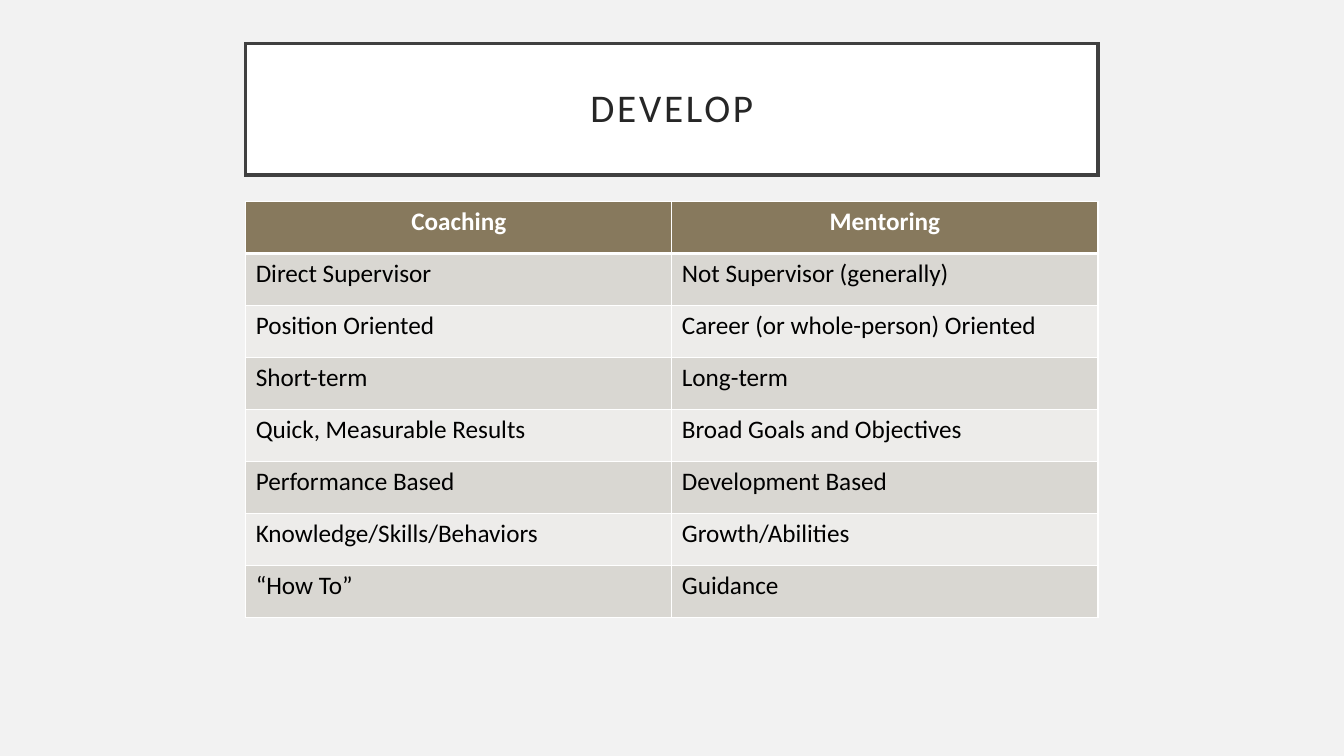
from dataclasses import dataclass

from lxml import etree
from pptx import Presentation
from pptx.dml.color import RGBColor
from pptx.enum import shapes, text
from pptx.oxml import ns
from pptx.util import Pt

TITLE = "DEVELOP"
HEADERS = ("Coaching", "Mentoring")
COMPARISONS = [
    ("Direct Supervisor", "Not Supervisor (generally)"),
    ("Position Oriented", "Career (or whole-person) Oriented"),
    ("Short-term", "Long-term"),
    ("Quick, Measurable Results", "Broad Goals and Objectives"),
    ("Performance Based", "Development Based"),
    ("Knowledge/Skills/Behaviors", "Growth/Abilities"),
    ("“How To”", "Guidance"),
]


@dataclass(frozen=True)
class Theme:
    font: str = "Calibri"
    background: str = "F2F2F2"
    white: str = "FFFFFF"
    frame: str = "404040"
    title: str = "262626"
    body: str = "000000"
    header: str = "87795D"
    bands: tuple = ("D9D7D2", "EDECEA")
    title_size: float = 28
    table_size: float = 18


THEME = Theme()
SLIDE_WIDTH, SLIDE_HEIGHT = 960, 540
LEFT, CONTENT_WIDTH = 175.5, 608.8
TITLE_TOP, TITLE_HEIGHT = 31.2, 93.8
TABLE_TOP, ROW_HEIGHT = 144, 37.15
TITLE_INSET = 14.4
GRID_LINE, HEADER_LINE = 1, 3


def color(value):
    return RGBColor.from_string(value)


def paint(target, value):
    target.fill.solid()
    target.fill.fore_color.rgb = color(value)


def write(frame, words, *, size, ink, bold=False, align=text.PP_ALIGN.LEFT,
          line_spacing=None, tracking=None):
    paragraph = frame.paragraphs[0]
    paragraph.alignment = align
    paragraph.line_spacing = line_spacing
    run = paragraph.add_run()
    run.text = words
    run.font.name = THEME.font
    run.font.size = Pt(size)
    run.font.bold = bold
    run.font.color.rgb = color(ink)
    if tracking:
        run.font._element.set("spc", str(tracking * 100))


def set_borders(cell, **widths):
    properties = cell._tc.get_or_add_tcPr()
    for side in "LRTB":
        border = etree.SubElement(properties, ns.qn(f"a:ln{side}"),
                                  w=str(Pt(widths.get(side, GRID_LINE))))
        fill = etree.SubElement(border, ns.qn("a:solidFill"))
        etree.SubElement(fill, ns.qn("a:srgbClr"), val=THEME.white)


def add_title(slide):
    shape = slide.shapes.add_shape(
        shapes.MSO_SHAPE.RECTANGLE,
        Pt(LEFT), Pt(TITLE_TOP), Pt(CONTENT_WIDTH), Pt(TITLE_HEIGHT))
    shape.shadow.inherit = False
    paint(shape, THEME.white)
    shape.line.color.rgb = color(THEME.frame)
    shape.line.width = Pt(2.5)
    outline = shape._element.spPr.find(ns.qn("a:ln"))
    etree.SubElement(outline, ns.qn("a:miter"), lim="800000")
    frame = shape.text_frame
    frame.word_wrap = True
    frame.vertical_anchor = text.MSO_ANCHOR.MIDDLE
    frame.margin_left = frame.margin_right = Pt(TITLE_INSET)
    frame.margin_top = frame.margin_bottom = Pt(TITLE_INSET)
    write(frame, TITLE, size=THEME.title_size, ink=THEME.title,
          align=text.PP_ALIGN.CENTER, line_spacing=0.9, tracking=2)


def add_comparison_table(slide):
    rows = [HEADERS, *COMPARISONS]
    table = slide.shapes.add_table(
        len(rows), len(HEADERS), Pt(LEFT), Pt(TABLE_TOP),
        Pt(CONTENT_WIDTH), Pt(ROW_HEIGHT * len(rows))).table
    for column in table.columns:
        column.width = Pt(CONTENT_WIDTH / len(HEADERS))
    for row_index, row in enumerate(rows):
        table.rows[row_index].height = Pt(ROW_HEIGHT)
        for column_index, words in enumerate(row):
            cell = table.cell(row_index, column_index)
            if row_index == 0:
                set_borders(cell, B=HEADER_LINE)
                paint(cell, THEME.header)
                write(cell.text_frame, words, size=THEME.table_size,
                      ink=THEME.white, bold=True, align=text.PP_ALIGN.CENTER)
            else:
                set_borders(cell, T=HEADER_LINE if row_index == 1 else GRID_LINE)
                paint(cell, THEME.bands[(row_index - 1) % len(THEME.bands)])
                write(cell.text_frame, words, size=THEME.table_size, ink=THEME.body)


def main():
    presentation = Presentation()
    presentation.slide_width = Pt(SLIDE_WIDTH)
    presentation.slide_height = Pt(SLIDE_HEIGHT)
    slide = presentation.slides.add_slide(presentation.slide_layouts[6])
    paint(slide.background, THEME.background)
    add_title(slide)
    add_comparison_table(slide)
    presentation.save("out.pptx")


if __name__ == "__main__":
    main()
